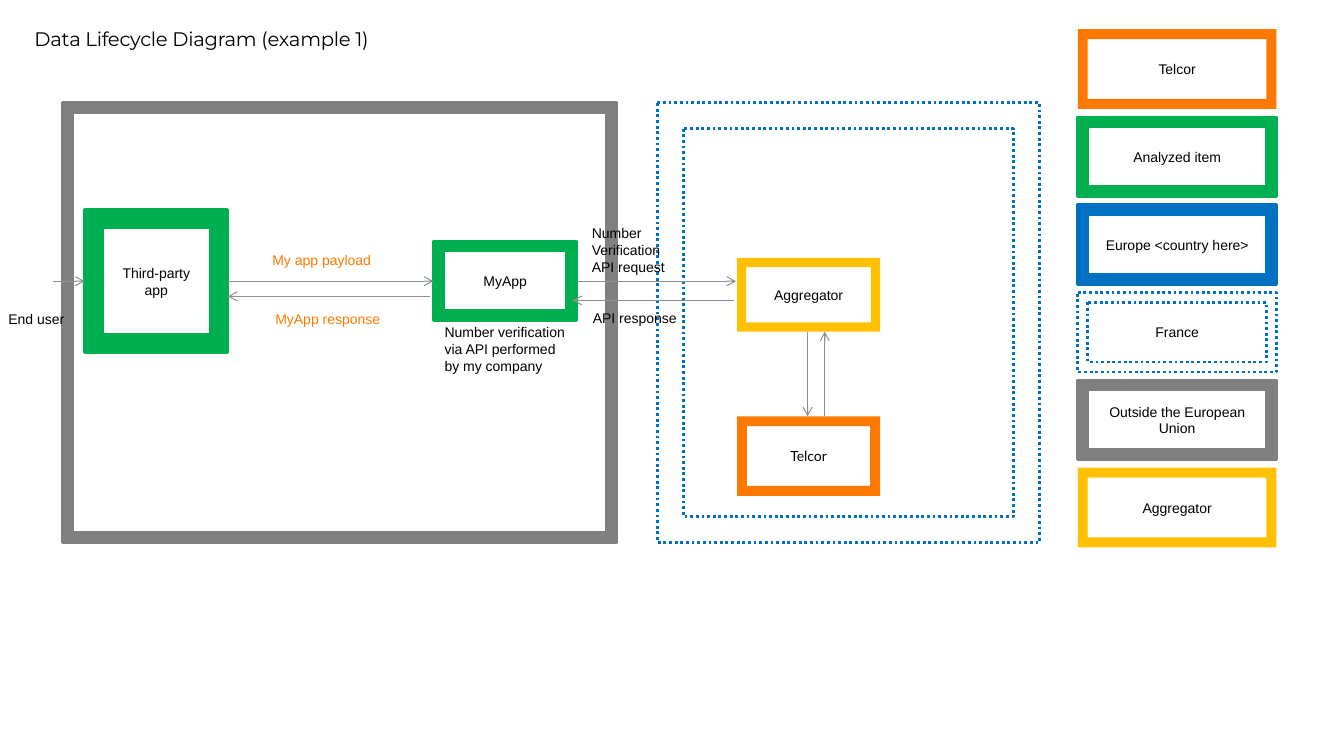
from pptx import Presentation
from pptx.dml.color import RGBColor as Rgb
from pptx.enum.dml import MSO_LINE as Dash
from pptx.enum.shapes import MSO_CONNECTOR as Link, MSO_SHAPE as Kind
from pptx.enum.text import MSO_ANCHOR as Anchor, MSO_AUTO_SIZE as Auto, PP_ALIGN as Align
from pptx.oxml.ns import qn
from pptx.util import Pt
from lxml.etree import SubElement as Sub

PX = 9144
BLACK = Rgb(0x00, 0x00, 0x00)
GREY = Rgb(0x80, 0x80, 0x80)
WIRE = Rgb(0x8F, 0x8F, 0x8F)
GREEN = Rgb(0x00, 0xB0, 0x50)
BLUE = Rgb(0x00, 0x70, 0xC0)
AMBER = Rgb(0xFF, 0x79, 0x00)
GOLD = Rgb(0xFF, 0xC0, 0x00)


class Chart:
    """Draws the lifecycle diagram, with lengths in px of a hundredth of an inch."""

    def __init__(self, wide, high):
        self.deck = Presentation()
        self.deck.slide_width, self.deck.slide_height = wide * PX, high * PX
        self.slide = self.deck.slides.add_slide(self.deck.slide_layouts[5])
        self.shapes = self.slide.shapes

    def put(self, shape, text, align, color=BLACK, face="Arial", size=10):
        par = shape.text_frame.paragraphs[0]
        par.text = text
        par.alignment = align
        font = par.font
        font.name, font.size, font.color.rgb = face, Pt(size), color
        return par

    def clear(self, frame):
        frame.margin_left = frame.margin_right = 0
        frame.margin_top = frame.margin_bottom = 0
        frame.vertical_anchor = Anchor.TOP
        frame.word_wrap = True

    def title(self, text, *box):
        shape = self.shapes.title
        shape.left, shape.top, shape.width, shape.height = [n * PX for n in box]
        self.clear(shape.text_frame)
        shape.text_frame.auto_size = Auto.NONE
        par = self.put(shape, text, Align.LEFT, face="Montserrat", size=14)
        par.line_spacing = 0.9
        par.runs[0].font._element.set("spc", "-20")

    def frame(self, box, color, text="", edge=True, dots=False, rim=0.125, face="Arial"):
        shape = self.shapes.add_shape(Kind.FRAME, *[n * PX for n in box])
        shape.shadow.inherit = False
        shape.adjustments[0] = rim
        if dots:
            shape.fill.background()
            shape.line.dash_style = Dash.ROUND_DOT
        else:
            shape.fill.solid()
            shape.fill.fore_color.rgb = color
        if edge:
            shape.line.color.rgb = color
            shape.line.width = Pt(2)
        else:
            shape.line.fill.background()
        if text:
            shape.text_frame.word_wrap = True
            shape.text_frame.vertical_anchor = Anchor.MIDDLE
            self.put(shape, text, Align.CENTER, face=face)

    def label(self, box, text, align=Align.LEFT, color=BLACK):
        shape = self.shapes.add_textbox(*[n * PX for n in box])
        self.clear(shape.text_frame)
        shape.text_frame.auto_size = Auto.SHAPE_TO_FIT_TEXT
        self.put(shape, text, align, color)

    def arrow(self, *ends):
        wire = self.shapes.add_connector(Link.STRAIGHT, *[n * PX for n in ends])
        wire.line.color.rgb = WIRE
        wire.line.width = Pt(0.75)
        props = wire._element.spPr
        Sub(props.find(qn("a:ln")), qn("a:tailEnd"), type="arrow")
        Sub(props, qn("a:effectLst"))


def main():
    art = Chart(1333, 750)
    art.title("Data Lifecycle Diagram (example 1)", 34, 29, 931, 81)

    art.frame((62, 102, 550, 436), GREY, rim=0.023)
    art.frame((652, 102, 379, 436), BLUE, dots=True, rim=0.068)
    art.frame((84, 208, 142, 142), GREEN, "Third-party app")
    art.frame((430, 239, 142, 79), GREEN, "MyApp")
    art.frame((731, 256, 142, 73), GOLD, "Aggregator", edge=False)
    art.frame((731, 413, 142, 79), AMBER, "Telcor", edge=False, face="Lato")

    legend = [
        ("Telcor", AMBER, False, False),
        ("Analyzed item", GREEN, True, False),
        ("Europe <country here>", BLUE, True, False),
        ("France", BLUE, True, True),
        ("Outside the European Union", GREY, True, False),
        ("Aggregator", GOLD, False, False),
    ]
    for row, (text, color, edge, dots) in enumerate(legend):
        art.frame((1069, 29 + 87 * row, 197, 79), color, text, edge, dots)

    for ends in [
        (53, 279, 84, 279),
        (226, 279, 430, 279),
        (426, 294, 226, 294),
        (572, 279, 730, 279),
        (728, 298, 568, 298),
        (801, 329, 801, 413),
        (818, 413, 818, 329),
    ]:
        art.arrow(*ends)

    art.label((2, 308, 68, 17), "End user", Align.CENTER)
    art.label((238, 250, 162, 17), "My app payload", Align.CENTER, AMBER)
    art.label((244, 308, 162, 17), "MyApp response", Align.CENTER, AMBER)
    art.label((441, 321, 124, 67), "Number verification via API performed by my company")
    art.label((587, 223, 91, 50), "Number Verification API request")
    art.label((588, 307, 112, 17), "API response")

    art.deck.save("out.pptx")


if __name__ == "__main__":
    main()
